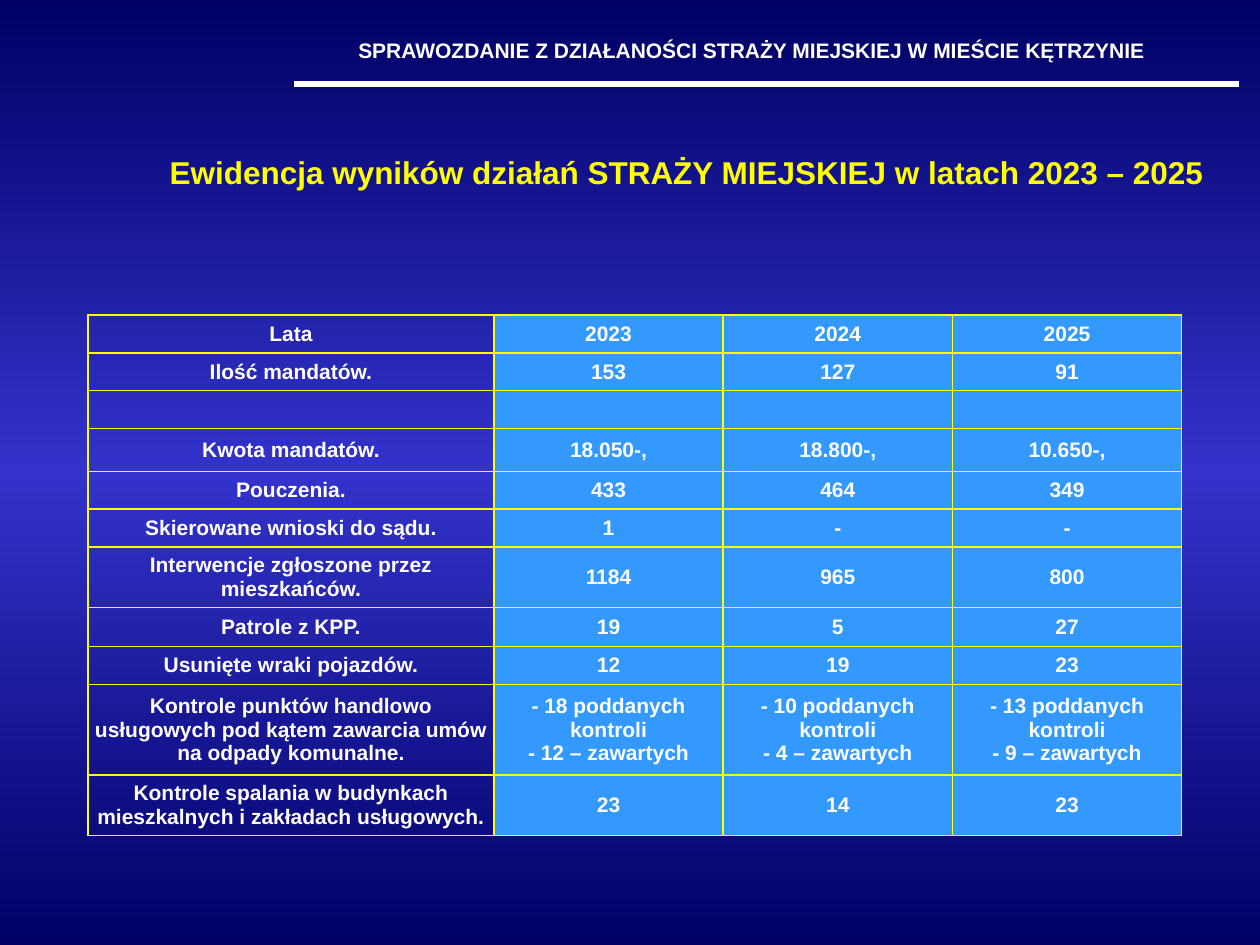
from copy import deepcopy

from lxml import etree
from pptx import Presentation, util as u
from pptx.dml.color import RGBColor
from pptx.enum import shapes, text
from pptx.oxml import ns

NAVY = RGBColor(0x00, 0x00, 0x66)
INDIGO = RGBColor(0x33, 0x33, 0xCC)
SKY = RGBColor(0x33, 0x99, 0xFF)
YELLOW = RGBColor(0xFF, 0xFF, 0x00)
WHITE = RGBColor(0xFF, 0xFF, 0xFF)
UNIT = u.Inches(1) // 12
FONT = "Arial"

HEADER = "SPRAWOZDANIE Z DZIAŁANOŚCI STRAŻY MIEJSKIEJ W MIEŚCIE KĘTRZYNIE"
TITLE = "Ewidencja wyników działań STRAŻY MIEJSKIEJ w latach 2023 – 2025"
LABEL_WIDTH, YEAR_WIDTH = 3.22, 1.82
RESULTS = [
    (0.3, "Lata", "2023", "2024", "2025"),
    (0.3, "Ilość mandatów.", "153", "127", "91"),
    (0.3, "", "", "", ""),
    (0.34, "Kwota mandatów.", "18.050-,", "18.800-,", "10.650-,"),
    (0.3, "Pouczenia.", "433", "464", "349"),
    (0.3, "Skierowane wnioski do sądu.", "1", "-", "-"),
    (0.48, "Interwencje zgłoszone przez mieszkańców.", "1184", "965", "800"),
    (0.31, "Patrole z KPP.", "19", "5", "27"),
    (0.3, "Usunięte wraki pojazdów.", "12", "19", "23"),
    (0.72, "Kontrole punktów handlowo usługowych pod kątem zawarcia umów na odpady komunalne.",
     "- 18 poddanych kontroli\n- 12 – zawartych",
     "- 10 poddanych kontroli\n- 4 – zawartych",
     "- 13 poddanych kontroli\n- 9 – zawartych"),
    (0.48, "Kontrole spalania w budynkach mieszkalnych i zakładach usługowych.",
     "23", "14", "23"),
]


def grid(*units):
    """Convert grid units of a twelfth of an inch to lengths."""
    return [round(unit * UNIT) for unit in units]


def paint_background(slide):
    """Give the slide a vertical gradient that is lightest in the middle."""
    fill = slide.background.fill
    fill.gradient()
    fill.gradient_angle = 90
    stop_list = slide.element.find(".//" + ns.qn("a:gsLst"))
    stop_list.append(deepcopy(stop_list[-1]))
    for stop, position, color in zip(fill.gradient_stops, (0, 0.5, 1), (NAVY, INDIGO, NAVY)):
        stop.position = position
        stop.color.rgb = color


def write(text_frame, content, size, color):
    """Fill a text frame with centred bold text."""
    text_frame.text = content
    for paragraph in text_frame.paragraphs:
        paragraph.alignment = text.PP_ALIGN.CENTER
        for run in paragraph.runs:
            run.font.name, run.font.size, run.font.bold = FONT, u.Pt(size), True
            run.font.color.rgb = color
        if not paragraph.runs:
            etree.SubElement(paragraph._p, ns.qn("a:endParaRPr"), sz=str(size * 100))


def set_heading(shape, content, box, size, color):
    """Place a one-line heading and write its text."""
    shape.left, shape.top, shape.width, shape.height = grid(*box)
    frame = shape.text_frame
    write(frame, content, size, color)
    frame.word_wrap = True
    frame.auto_size = text.MSO_AUTO_SIZE.SHAPE_TO_FIT_TEXT
    frame.vertical_anchor = text.MSO_ANCHOR.TOP


def add_rule(slide, start, end):
    """Draw the thick line below the header."""
    rule = slide.shapes.add_connector(shapes.MSO_CONNECTOR.STRAIGHT, *grid(*start, *end))
    rule.line.color.rgb = WHITE
    rule.line.width = u.Pt(3)
    etree.SubElement(rule._element.spPr, ns.qn("a:effectLst"))


def add_borders(cell):
    """Outline a cell on all four sides."""
    properties = cell._tc.get_or_add_tcPr()
    for side in ("lnL", "lnR", "lnT", "lnB"):
        line = etree.SubElement(properties, ns.qn("a:" + side), w=str(u.Pt(1)))
        solid = etree.SubElement(line, ns.qn("a:solidFill"))
        etree.SubElement(solid, ns.qn("a:srgbClr"), val=str(YELLOW))


def format_cell(cell, content, is_label):
    """Write a cell and style it as a row label or a yearly value."""
    write(cell.text_frame, content, 12, WHITE)
    cell.vertical_anchor = text.MSO_ANCHOR.MIDDLE
    side, edge = (0.04, 0.04) if is_label else (0.1, 0.05)
    cell.margin_left = cell.margin_right = u.Inches(side)
    cell.margin_top = cell.margin_bottom = u.Inches(edge)
    add_borders(cell)
    if is_label:
        cell.fill.background()
    else:
        cell.fill.solid()
        cell.fill.fore_color.rgb = SKY


def add_results_table(slide, left, top):
    """Add the table of results by year."""
    widths = [LABEL_WIDTH] + [YEAR_WIDTH] * 3
    height = sum(row[0] for row in RESULTS)
    table = slide.shapes.add_table(len(RESULTS), len(widths), *grid(left, top),
                                   u.Inches(sum(widths)), u.Inches(height)).table
    table.first_row = table.horz_banding = False
    for column, width in zip(table.columns, widths):
        column.width = u.Inches(width)
    for row, (row_height, *contents) in zip(table.rows, RESULTS):
        row.height = u.Inches(row_height)
        for index, (cell, content) in enumerate(zip(row.cells, contents)):
            format_cell(cell, content, index == 0)


def main():
    """Build and save the slide."""
    presentation = Presentation()
    presentation.slide_width, presentation.slide_height = grid(120, 90)
    slide = presentation.slides.add_slide(presentation.slide_layouts[5])
    paint_background(slide)
    add_rule(slide, (28, 8), (118, 8))
    add_results_table(slide, 8.4, 30)
    set_heading(slide.shapes.title, TITLE, (14.9, 14, 101, 4.8), 18, YELLOW)
    header = slide.shapes.add_textbox(0, 0, 0, 0)
    set_heading(header, HEADER, (25.6, 3, 92, 3.6), 12, WHITE)
    presentation.save("out.pptx")


if __name__ == "__main__":
    main()
